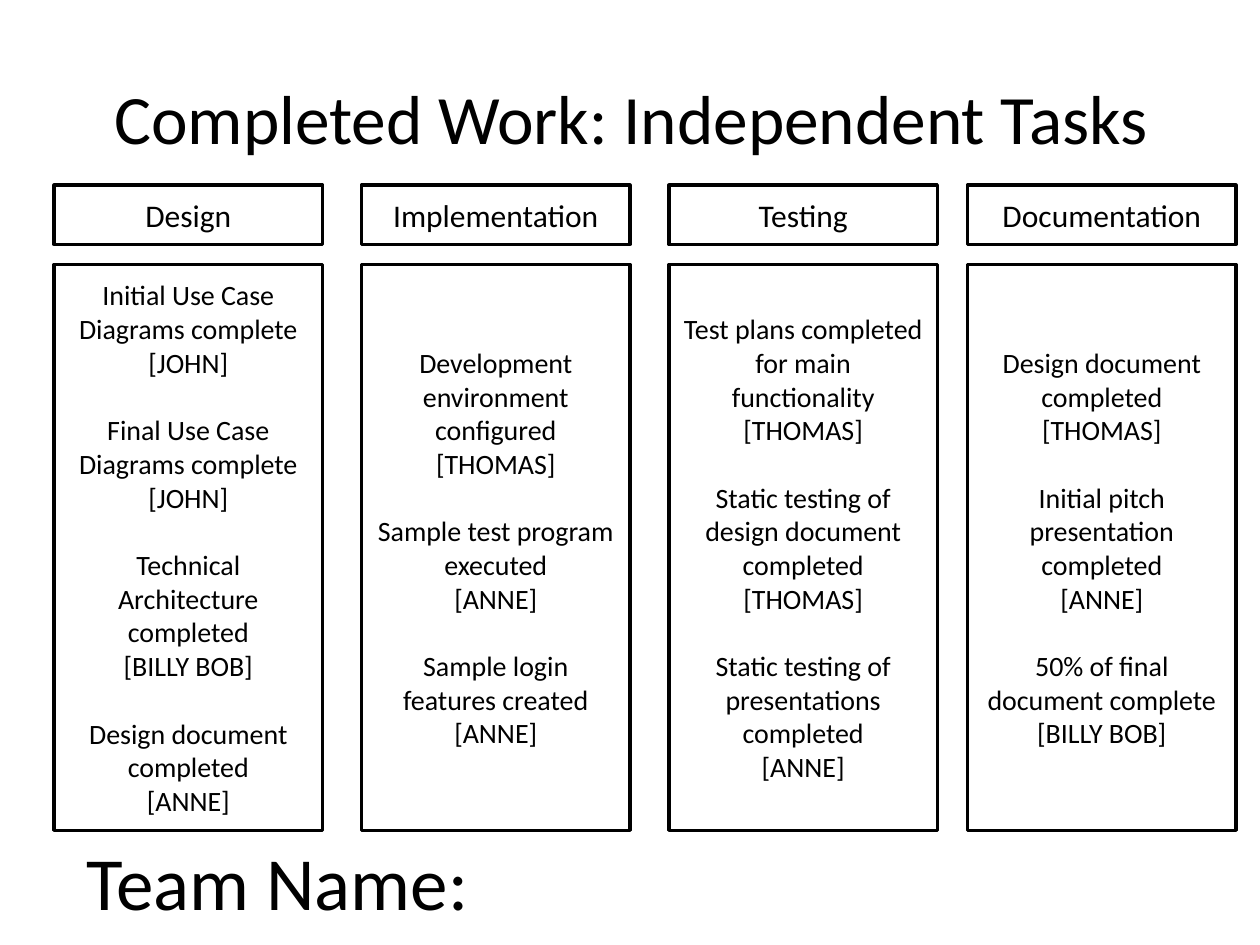
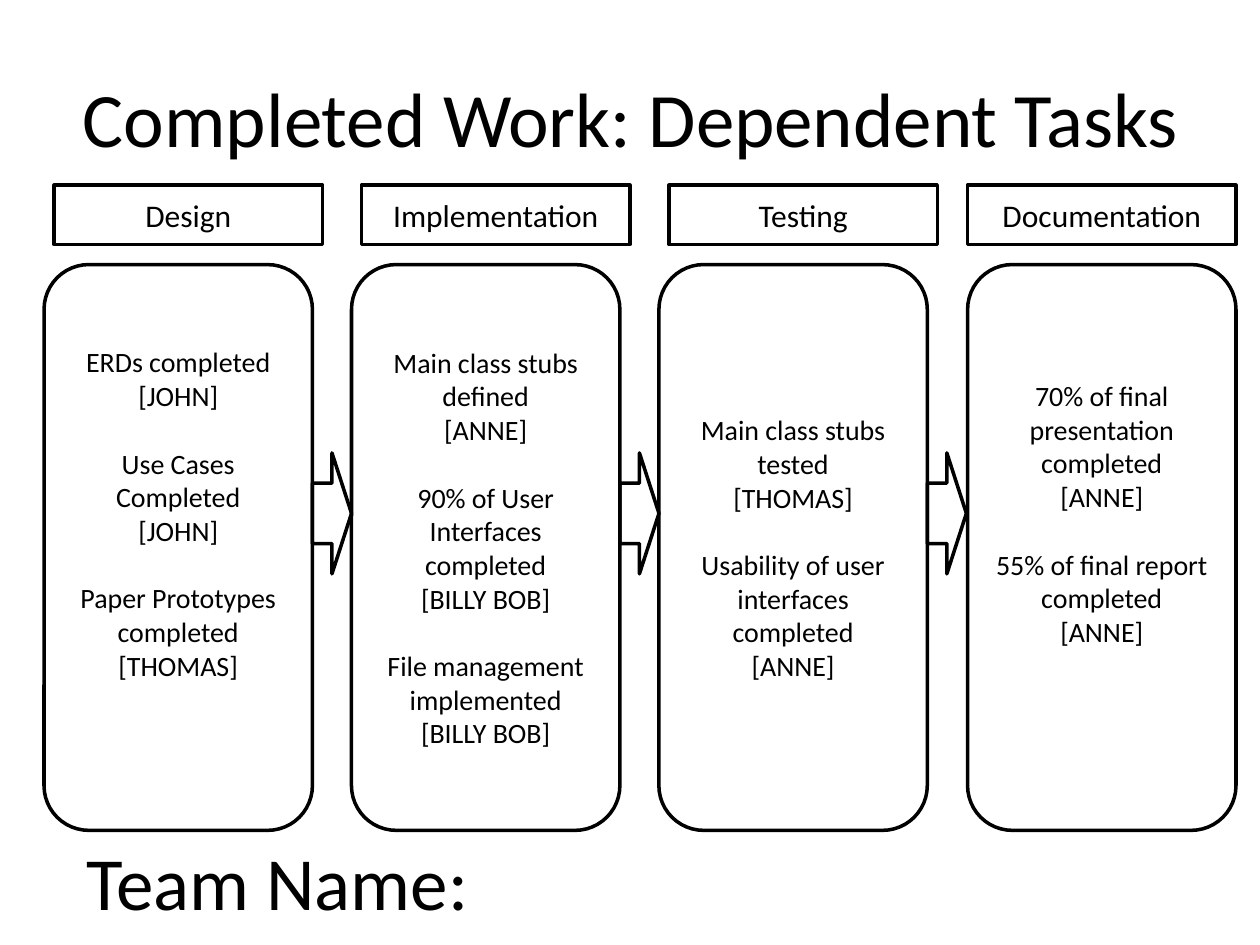
"""Build two slides that show a team's finished work by project phase."""
from dataclasses import dataclass

from pptx import Presentation
from pptx import util as u
from pptx.dml import color
from pptx.enum import shapes, text

WIDE, HIGH = 10, 7.5
FONT, INK = "Calibri", "000000"
COL, STEP = 2.13, 2.44
HEAD_TOP, HEAD_HIGH = 1.47, 0.47
BODY_TOP, BODY_HIGH = 2.1, 4.49
HEAD_LEFTS = [0.43 + STEP * i for i in range(3)] + [7.68]
ROUND_LEFTS = [0.35 + STEP * i for i in range(3)] + [7.68]
LINE = 19.5
KIND = shapes.MSO_SHAPE


@dataclass
class Task:
    name: str
    owner: str


@dataclass
class Phase:
    tasks: list[Task]
    spare: int = 0


@dataclass
class Page:
    title: str
    size: float
    kind: int
    lefts: list[float]
    phases: list[Phase]
    arrows: bool = False


HEADS = ["Design", "Implementation", "Testing", "Documentation"]

PAGES = [
    Page("Completed Work: Independent Tasks", 39.6, KIND.RECTANGLE, HEAD_LEFTS, [
        Phase([Task("Initial Use Case Diagrams complete", "JOHN"),
               Task("Final Use Case Diagrams complete", "JOHN"),
               Task("Technical Architecture completed", "BILLY BOB"),
               Task("Design document completed", "ANNE")]),
        Phase([Task("Development environment configured", "THOMAS"),
               Task("Sample test program executed", "ANNE"),
               Task("Sample login features created", "ANNE")]),
        Phase([Task("Test plans completed for main functionality", "THOMAS"),
               Task("Static testing of design document completed", "THOMAS"),
               Task("Static testing of presentations completed", "ANNE")]),
        Phase([Task("Design document completed", "THOMAS"),
               Task("Initial pitch presentation completed", "ANNE"),
               Task("50% of final document complete", "BILLY BOB")]),
    ]),
    Page("Completed Work: Dependent Tasks", 44, KIND.ROUNDED_RECTANGLE, ROUND_LEFTS, [
        Phase([Task("ERDs completed", "JOHN"),
               Task("Use Cases Completed", "JOHN"),
               Task("Paper Prototypes completed", "THOMAS")], spare=2),
        Phase([Task("Main class stubs defined", "ANNE"),
               Task("90% of User Interfaces completed", "BILLY BOB"),
               Task("File management implemented", "BILLY BOB")]),
        Phase([Task("Main class stubs tested", "THOMAS"),
               Task("Usability of user interfaces completed", "ANNE")]),
        Phase([Task("70% of final presentation completed", "ANNE"),
               Task("55% of final report completed", "ANNE")], spare=2),
    ], arrows=True),
]


def tint(code: str) -> color.RGBColor:
    """Turn a hex string into a colour."""
    return color.RGBColor.from_string(code)


def write(frame, lines: list[str], size: float, align=text.PP_ALIGN.CENTER,
          group: int = 1, gap: float = 0) -> None:
    """Fill a frame with lines, leaving a gap before each later group."""
    frame.word_wrap = True
    frame.auto_size = text.MSO_AUTO_SIZE.NONE
    frame.vertical_anchor = text.MSO_ANCHOR.MIDDLE
    for i, line in enumerate(lines):
        para = frame.paragraphs[0] if i == 0 else frame.add_paragraph()
        para.alignment = align
        para.space_before = u.Pt(gap if i and i % group == 0 else 0)
        run = para.add_run()
        run.text = line
        run.font.name, run.font.size = FONT, u.Pt(size)
        run.font.color.rgb = tint(INK)


def box(slide, kind: int, left: float, top: float, wide: float, high: float):
    """Add an outlined shape without fill."""
    shape = slide.shapes.add_shape(kind, *map(u.Inches, (left, top, wide, high)))
    shape.shadow.inherit = False
    shape.fill.background()
    shape.line.color.rgb = tint(INK)
    shape.line.width = u.Pt(2)
    return shape


def frame(slide, page: Page) -> None:
    """Set the title, the phase heads and the team line."""
    title = slide.shapes.title
    title.left, title.top, title.width, title.height = map(u.Inches, (0.51, 0.3, 9, 1.25))
    write(title.text_frame, [page.title], page.size)
    for left, head in zip(HEAD_LEFTS, HEADS):
        cell = box(slide, KIND.RECTANGLE, left, HEAD_TOP, COL, HEAD_HIGH)
        write(cell.text_frame, [head], 18)
    team = slide.shapes.add_textbox(*map(u.Inches, (0.59, HIGH - 1.02, 9, 1.02)))
    write(team.text_frame, ["Team Name:"], 42.9, align=text.PP_ALIGN.LEFT)


def body(slide, page: Page) -> None:
    """Draw the task boxes and the arrows between them."""
    for left, phase in zip(page.lefts, page.phases):
        cell = box(slide, page.kind, left, BODY_TOP, COL, BODY_HIGH)
        lines = [line for task in phase.tasks for line in (task.name, f"[{task.owner}]")]
        write(cell.text_frame, lines, 16, group=2, gap=LINE)
        cell.text_frame.margin_bottom = u.Inches(0.05) + u.Pt(LINE * phase.spare)
    if page.arrows:
        high = 0.96
        for left in page.lefts[:-1]:
            box(slide, KIND.RIGHT_ARROW, left + COL,
                BODY_TOP + (BODY_HIGH - high) / 2 - 0.27, STEP - COL, high)


def main() -> None:
    """Build and save the deck."""
    deck = Presentation()
    deck.slide_width, deck.slide_height = u.Inches(WIDE), u.Inches(HIGH)
    for page in PAGES:
        slide = deck.slides.add_slide(deck.slide_layouts[5])
        frame(slide, page)
        body(slide, page)
    deck.save("out.pptx")


if __name__ == "__main__":
    main()
